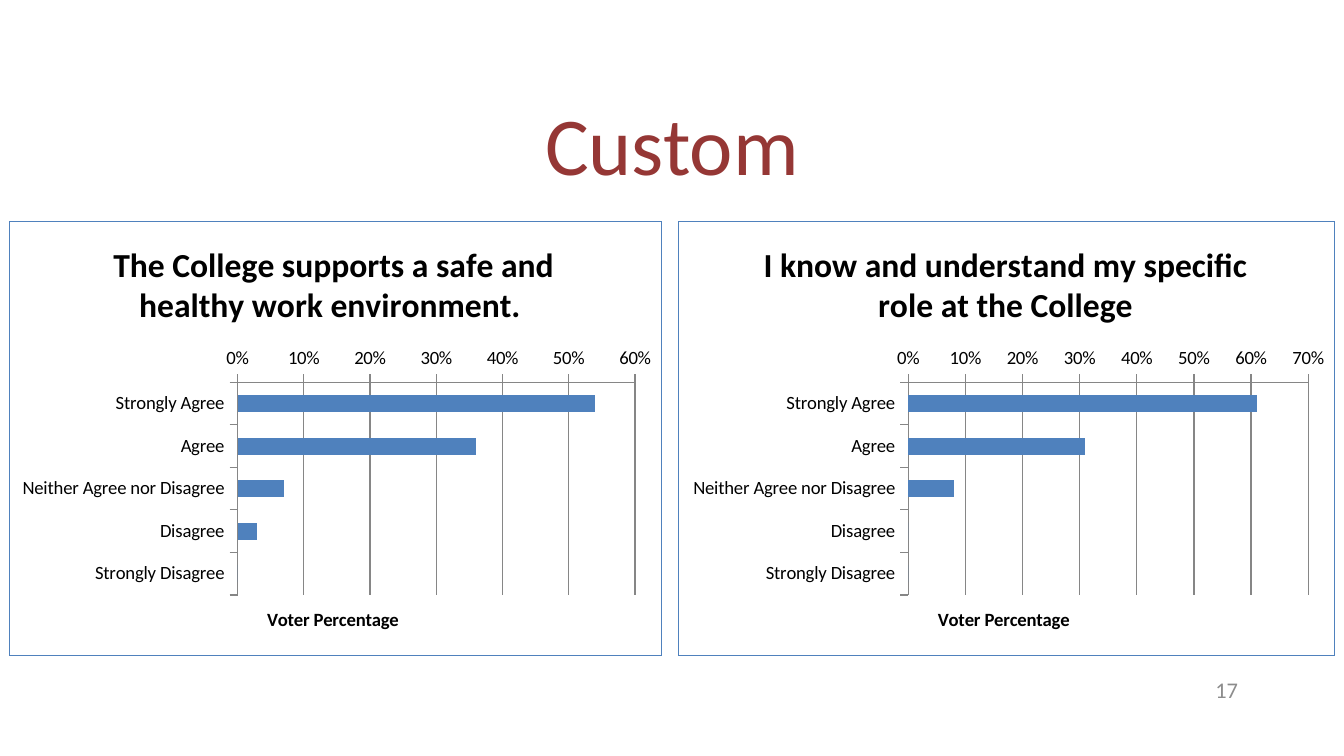
from dataclasses import dataclass

from lxml.etree import fromstring
from pptx import Presentation
from pptx.chart.data import CategoryChartData
from pptx.dml.color import RGBColor
from pptx.enum.chart import XL_CHART_TYPE, XL_TICK_MARK
from pptx.enum.text import MSO_ANCHOR, PP_ALIGN
from pptx.oxml.ns import nsdecls, qn
from pptx.util import Inches, Pt

TITLE = "Custom"
PAGE = "17"
AXIS_TITLE = "Voter Percentage"
ANSWERS = ["Strongly Agree", "Agree", "Neither Agree nor Disagree",
           "Disagree", "Strongly Disagree"]
CHARTS = [
    dict(title="I know and understand my specific role at the College",
         values=[0.61, 0.31, 0.08, 0, 0], top=0.7, title_x=0.12,
         left=5.05, width=4.88),
    dict(title="The College supports a safe and healthy work environment. ",
         values=[0.54, 0.36, 0.07, 0.03, 0], top=0.6, title_x=0.15,
         left=0.07, width=4.85),
]


@dataclass(frozen=True)
class Theme:
    font: str = "Calibri"
    title: str = "953735"
    text: str = "000000"
    muted: str = "8C8C8C"
    bar: str = "4F81BD"
    grid: str = "868686"
    title_size: int = 44
    chart_title_size: int = 18
    chart_size: int = 10
    page_size: int = 12


T = Theme()
W = 10
H = W * 9 / 16
CHART_TOP, CHART_H = 1.65, 3.23
PLOT = dict(layoutTarget="inner", xMode="edge", yMode="edge",
            x=0.35, y=0.37, w=0.61, h=0.49)


def style(font, size, color, bold=False):
    font.name, font.size, font.bold = T.font, Pt(size), bold
    font.color.rgb = RGBColor.from_string(color)


def add_text(s, text, box, size, color, align, spacing=1.0):
    tf = s.shapes.add_textbox(*map(Inches, box)).text_frame
    tf.word_wrap = True
    tf.vertical_anchor = MSO_ANCHOR.MIDDLE
    tf.text = text
    p = tf.paragraphs[0]
    p.alignment, p.line_spacing = align, spacing
    style(p.runs[0].font, size, color)


def layout(parent, index, **parts):
    for old in parent.findall(qn("c:layout")):
        parent.remove(old)
    body = "".join(f'<c:{k} val="{v}"/>' for k, v in parts.items())
    parent.insert(index, fromstring(
        f'<c:layout {nsdecls("c")}><c:manualLayout>{body}'
        '</c:manualLayout></c:layout>'))


def set_title(title, text, size, x, y):
    title.text_frame.text = text
    style(title.text_frame.paragraphs[0].runs[0].font, size, T.text, True)
    layout(title._element, 1, xMode="edge", yMode="edge", x=x, y=y)


def add_bars(s, title, values, top, title_x, left, width):
    data = CategoryChartData(number_format="0%")
    data.categories = ANSWERS
    data.add_series("Series 1", values)
    chart = s.shapes.add_chart(
        XL_CHART_TYPE.BAR_CLUSTERED,
        *map(Inches, (left, CHART_TOP, width, CHART_H)), data).chart
    style(chart.font, T.chart_size, T.text)
    chart.has_legend = False
    set_title(chart.chart_title, title, T.chart_title_size, title_x, 0.03)

    plot = chart.plots[0]
    plot.gap_width, plot.vary_by_categories = 150, False
    fill = plot.series[0].format.fill
    fill.solid()
    fill.fore_color.rgb = RGBColor.from_string(T.bar)

    cat, val = chart.category_axis, chart.value_axis
    cat.reverse_order = True
    val.minimum_scale, val.maximum_scale, val.major_unit = 0, top, 0.1
    val.tick_labels.number_format = "0%"
    val.tick_labels.number_format_is_linked = False
    val.has_major_gridlines = True
    for axis in (cat, val):
        axis.major_tick_mark = XL_TICK_MARK.OUTSIDE
        axis.minor_tick_mark = XL_TICK_MARK.NONE
    for part in (cat, val, val.major_gridlines):
        part.format.line.color.rgb = RGBColor.from_string(T.grid)
    set_title(val.axis_title, AXIS_TITLE, T.chart_size, 0.39, 0.88)

    space = chart._chartSpace
    layout(space.chart.plotArea, 0, **PLOT)
    space.chart.addnext(fromstring(
        f'<c:spPr {nsdecls("c", "a")}><a:noFill/><a:ln><a:solidFill>'
        f'<a:srgbClr val="{T.bar}"/></a:solidFill></a:ln></c:spPr>'))


def main():
    prs = Presentation()
    prs.slide_width, prs.slide_height = Inches(W), Inches(H)
    s = prs.slides.add_slide(prs.slide_layouts[6])
    add_text(s, TITLE, (0.69, 0.56, 8.62, 1.09), T.title_size, T.title,
             PP_ALIGN.CENTER, 0.9)
    for chart in CHARTS:
        add_bars(s, **chart)
    add_text(s, PAGE, (7.06, 4.98, 2.25, 0.3), T.page_size, T.muted,
             PP_ALIGN.RIGHT)
    prs.save("out.pptx")


if __name__ == "__main__":
    main()
